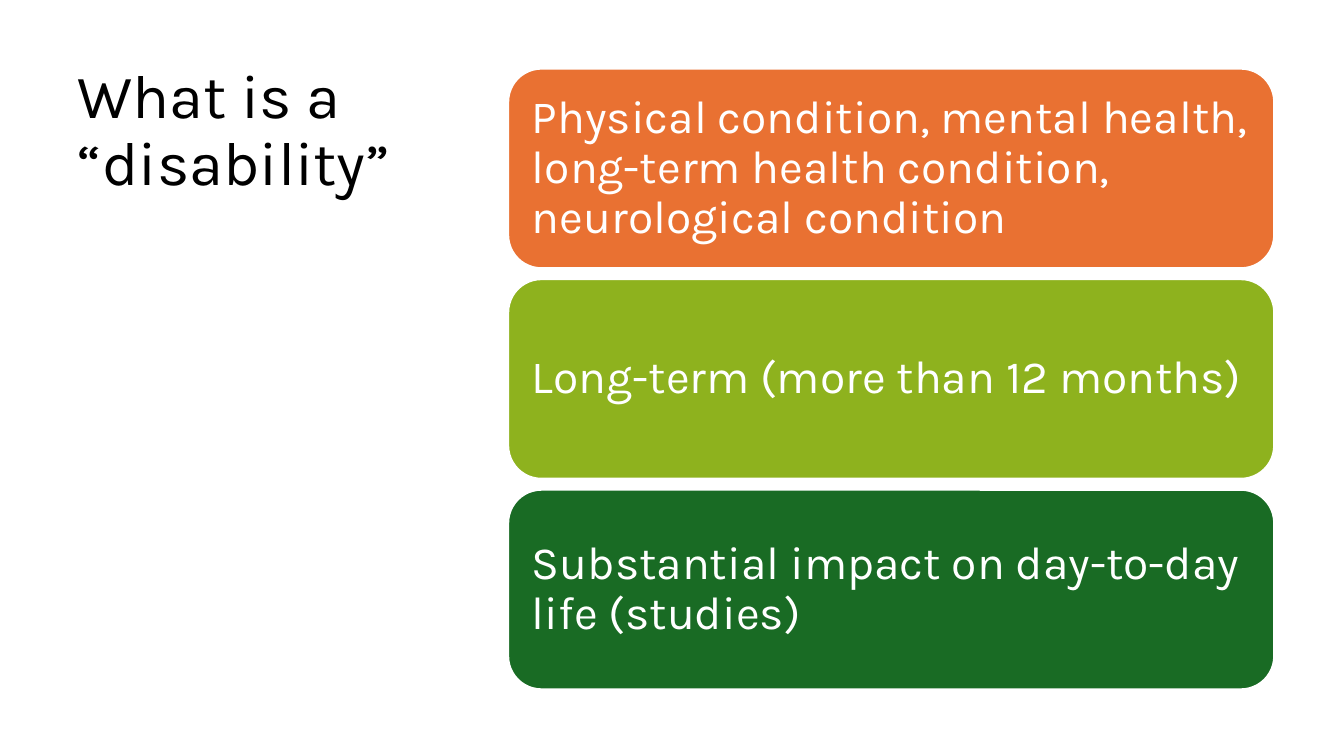
from typing import NamedTuple

from pptx import Presentation
from pptx.dml.color import RGBColor
from pptx.enum.shapes import MSO_SHAPE
from pptx.enum.text import MSO_ANCHOR, MSO_AUTO_SIZE, PP_ALIGN
from pptx.util import Pt

ROUNDED = MSO_SHAPE.ROUNDED_RECTANGLE
TOP, MIDDLE = MSO_ANCHOR.TOP, MSO_ANCHOR.MIDDLE
LEFT = PP_ALIGN.LEFT
NO_AUTOFIT = MSO_AUTO_SIZE.NONE
TITLE_ONLY_LAYOUT = 5

FONT = "Karla"
WHITE, BLACK = "FFFFFF", "000000"
CARD_LEFT, CARD_TOP, CARD_WIDTH, CARD_HEIGHT = 363, 49, 547.2, 142.6
CARD_PITCH = 150.4
CARD_INSET = 10


class Criterion(NamedTuple):
    text: str
    fill: str


CRITERIA = [
    Criterion(
        "Physical condition, mental health, long-term health condition, "
        "neurological condition",
        "E97132",
    ),
    Criterion("Long-term (more than 12 months)", "8EB21E"),
    Criterion("Substantial impact on day-to-day life (studies)", "196B24"),
]


def set_color(color_format, value: str) -> None:
    color_format.rgb = RGBColor.from_string(value)


def write_text(shape, text: str, size: float, color: str, anchor) -> None:
    frame = shape.text_frame
    frame.text = text
    frame.word_wrap = True
    frame.auto_size = NO_AUTOFIT
    frame.vertical_anchor = anchor
    paragraph = frame.paragraphs[0]
    paragraph.alignment = LEFT
    paragraph.line_spacing = 0.9
    paragraph.font.name = FONT
    paragraph.font.size = Pt(size)
    set_color(paragraph.font.color, color)


def add_title(slide) -> None:
    title = slide.shapes.title
    title.left, title.top = Pt(48.2), Pt(43.2)
    title.width, title.height = Pt(275), Pt(455.8)
    write_text(title, "What is a “disability”", 44, BLACK, TOP)


def add_card(slide, criterion: Criterion, top: float) -> None:
    card = slide.shapes.add_shape(
        ROUNDED, Pt(CARD_LEFT), Pt(top), Pt(CARD_WIDTH), Pt(CARD_HEIGHT)
    )
    card.shadow.inherit = False
    card.fill.solid()
    set_color(card.fill.fore_color, criterion.fill)
    set_color(card.line.color, WHITE)
    card.line.width = Pt(1.5)
    frame = card.text_frame
    frame.margin_left = frame.margin_right = Pt(CARD_INSET)
    frame.margin_top = frame.margin_bottom = Pt(CARD_INSET)
    write_text(card, criterion.text, 33, WHITE, MIDDLE)


def main() -> None:
    presentation = Presentation()
    presentation.slide_width, presentation.slide_height = Pt(960), Pt(540)
    layout = presentation.slide_layouts[TITLE_ONLY_LAYOUT]
    slide = presentation.slides.add_slide(layout)
    add_title(slide)
    for index, criterion in enumerate(CRITERIA):
        add_card(slide, criterion, CARD_TOP + index * CARD_PITCH)
    presentation.save("out.pptx")


if __name__ == "__main__":
    main()
